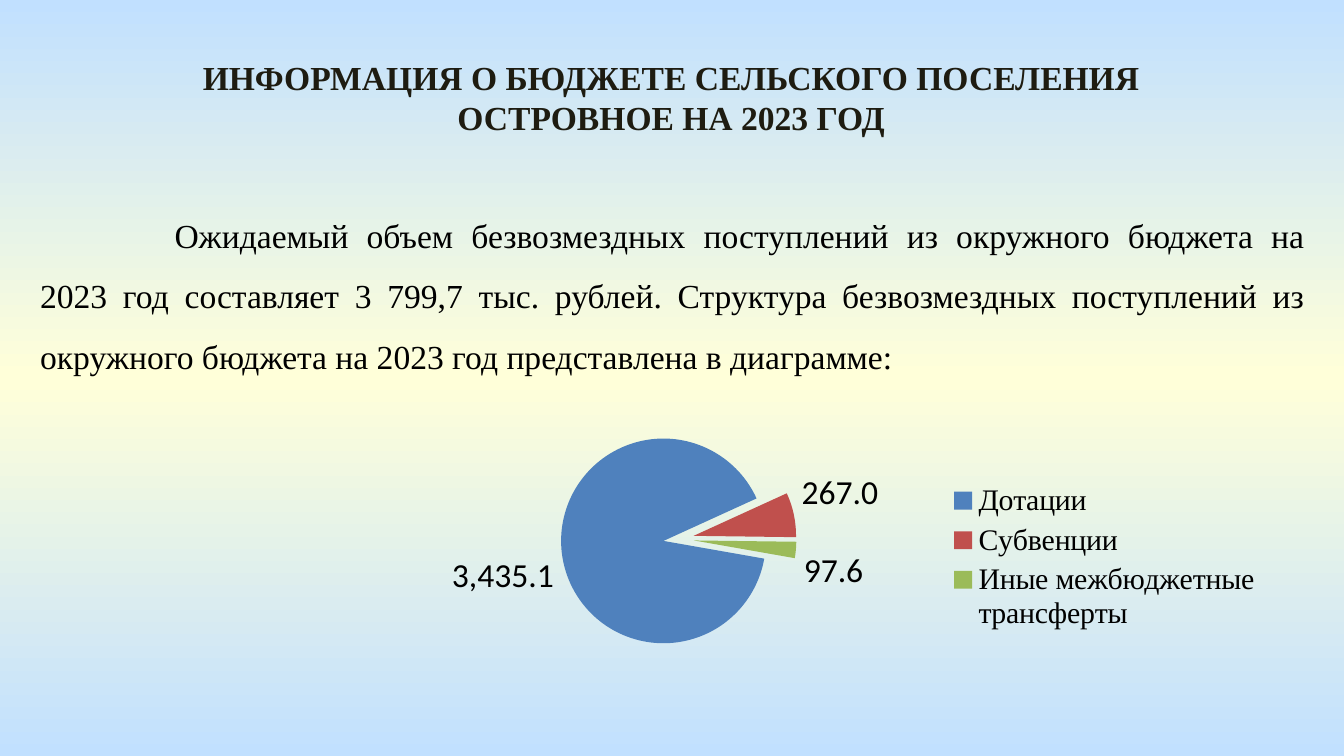
from copy import deepcopy
from typing import NamedTuple

from lxml.etree import SubElement
from pptx import Presentation
from pptx.chart.data import CategoryChartData
from pptx.dml.color import RGBColor
from pptx.enum.chart import XL_CHART_TYPE, XL_LABEL_POSITION, XL_LEGEND_POSITION
from pptx.enum.text import MSO_ANCHOR, MSO_AUTO_SIZE, PP_ALIGN
from pptx.oxml.ns import qn
from pptx.util import Inches, Pt

WIDTH = Inches(10)
HEIGHT = WIDTH * 9 // 16
SERIF, SANS = "Times New Roman", "Calibri"
COLORS = {
    "sky": "C1E0FF",
    "cream": "FFFFD9",
    "heading": "1E1C11",
    "text": "000000",
    "grants": "4F81BD",
    "subventions": "C0504D",
    "transfers": "9BBB59",
}
HEADING = "ИНФОРМАЦИЯ О БЮДЖЕТЕ СЕЛЬСКОГО ПОСЕЛЕНИЯ ОСТРОВНОЕ НА 2023 ГОД"
SUMMARY = (
    "\tОжидаемый объем безвозмездных поступлений из окружного бюджета на 2023 год "
    "составляет 3 799,7 тыс. рублей. Структура безвозмездных поступлений из "
    "окружного бюджета на 2023 год представлена в диаграмме:"
)


class Area(NamedTuple):
    """Rectangle in inches."""

    left: float
    top: float
    width: float
    height: float

    def emu(self) -> list:
        """Return the rectangle as lengths."""
        return [Inches(value) for value in self]


class Revenue(NamedTuple):
    """One slice of the transfers received."""

    label: str
    amount: float
    color: str


HEADING_AREA = Area(1.13, 0.37, 7.73, 0.71)
SUMMARY_AREA = Area(0.2, 1.4, 9.61, 1.46)
CHART_AREA = Area(0.43, 2.66, 9.06, 2.97)
PLOT_SHARES = {"x": 0.39, "y": 0.16, "w": 0.24, "h": 0.59}
REVENUES = [
    Revenue("Дотации", 3435.1, "grants"),
    Revenue("Субвенции", 267, "subventions"),
    Revenue("Иные межбюджетные трансферты", 97.6, "transfers"),
]


def rgb(name: str) -> RGBColor:
    """Look up a palette color."""
    return RGBColor.from_string(COLORS[name])


def style_font(font, size: float, family: str, color: str = "text") -> None:
    """Set size, family and color of a font."""
    font.size, font.name = Pt(size), family
    font.color.rgb = rgb(color)


def paint_background(slide) -> None:
    """Fill the slide with a vertical sky-cream-sky gradient."""
    fill = slide.background.fill
    fill.gradient()
    fill.gradient_angle = 270
    stop_list = next(slide.element.iter(qn("a:gsLst")))
    stop_list.insert(1, deepcopy(stop_list[0]))
    for stop, position, color in zip(fill.gradient_stops, (0, 0.5, 1), ("sky", "cream", "sky")):
        stop.position = position
        stop.color.rgb = rgb(color)


def write_text(shape, area: Area, text: str, align: PP_ALIGN, color: str,
               spacing: float = 1.0, bold: bool = False) -> None:
    """Place a shape and write one formatted paragraph in it."""
    shape.left, shape.top, shape.width, shape.height = area.emu()
    frame = shape.text_frame
    frame.word_wrap = True
    frame.auto_size = MSO_AUTO_SIZE.SHAPE_TO_FIT_TEXT
    frame.vertical_anchor = MSO_ANCHOR.TOP
    paragraph = frame.paragraphs[0]
    paragraph.text = text
    paragraph.alignment, paragraph.line_spacing = align, spacing
    for run in paragraph.runs:
        style_font(run.font, 18, SERIF, color)
        run.font.bold = bold


def set_tab_stop(shape, inches: float) -> None:
    """Give the first paragraph of a shape a left tab stop."""
    properties = next(shape.element.iter(qn("a:pPr")))
    tab = SubElement(SubElement(properties, qn("a:tabLst")), qn("a:tab"))
    tab.set("pos", str(Inches(inches)))
    tab.set("algn", "l")


def place_plot(chart) -> None:
    """Fix the inner plot area at its shares of the chart."""
    plot_area = next(chart.element.iter(qn("c:plotArea")))
    for old_layout in plot_area.findall(qn("c:layout")):
        plot_area.remove(old_layout)
    layout = SubElement(plot_area, qn("c:layout"))
    plot_area.insert(0, layout)
    manual = SubElement(layout, qn("c:manualLayout"))
    settings = {"layoutTarget": "inner", "xMode": "edge", "yMode": "edge", **PLOT_SHARES}
    for tag, value in settings.items():
        SubElement(manual, qn(f"c:{tag}")).set("val", str(value))


def rotate_and_explode(chart, angle: int, distance: int) -> None:
    """Turn the first slice and pull the slices apart."""
    pie = next(chart.element.iter(qn("c:pieChart")))
    for old_angle in pie.findall(qn("c:firstSliceAng")):
        pie.remove(old_angle)
    SubElement(pie, qn("c:firstSliceAng")).set("val", str(angle))
    series = pie.find(qn("c:ser"))
    explosion = SubElement(series, qn("c:explosion"))
    explosion.set("val", str(distance))
    series.find(qn("c:tx")).addnext(explosion)


def add_revenue_pie(slide) -> None:
    """Draw the pie of transfers with its legend and values."""
    data = CategoryChartData(number_format="#,##0.0")
    data.categories = [revenue.label for revenue in REVENUES]
    data.add_series("Series 1", [revenue.amount for revenue in REVENUES])
    chart = slide.shapes.add_chart(XL_CHART_TYPE.PIE, *CHART_AREA.emu(), data).chart
    style_font(chart.font, 18, SANS)
    chart.has_title = False
    chart.has_legend = True
    chart.legend.position = XL_LEGEND_POSITION.RIGHT
    chart.legend.include_in_layout = False
    style_font(chart.legend.font, 16, SERIF)
    pie = chart.plots[0]
    pie.vary_by_categories = True
    series = pie.series[0]
    for index, revenue in enumerate(REVENUES):
        slice_fill = series.points[index].format.fill
        slice_fill.solid()
        slice_fill.fore_color.rgb = rgb(revenue.color)
    labels = series.data_labels
    labels.show_value = True
    labels.number_format, labels.number_format_is_linked = "#,##0.0", False
    labels.position = XL_LABEL_POSITION.OUTSIDE_END
    style_font(labels.font, 18, SANS)
    place_plot(chart)
    rotate_and_explode(chart, angle=100, distance=15)


def main() -> None:
    """Build the budget slide."""
    deck = Presentation()
    deck.slide_width, deck.slide_height = WIDTH, HEIGHT
    slide = deck.slides.add_slide(deck.slide_layouts[5])
    paint_background(slide)
    write_text(slide.shapes.title, HEADING_AREA, HEADING, PP_ALIGN.CENTER, "heading", bold=True)
    summary = slide.shapes.add_textbox(*SUMMARY_AREA.emu())
    write_text(summary, SUMMARY_AREA, SUMMARY, PP_ALIGN.JUSTIFY, "text", spacing=1.5)
    set_tab_stop(summary, 1)
    add_revenue_pie(slide)
    deck.save("out.pptx")


if __name__ == "__main__":
    main()
